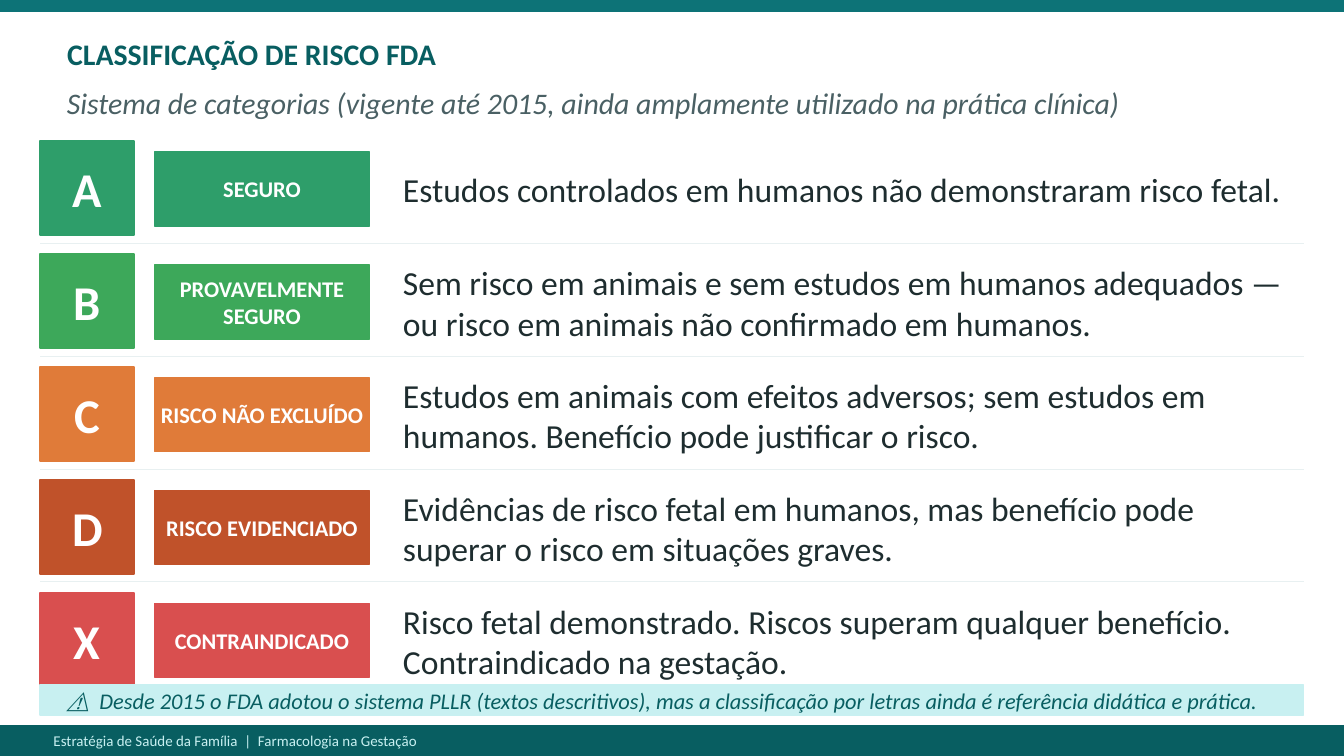
from lxml import etree
from pptx import Presentation
from pptx.dml.color import RGBColor
from pptx.enum import shapes, text
from pptx.oxml import ns
from pptx.util import Pt

rgb = RGBColor.from_string
left, center = text.PP_ALIGN.LEFT, text.PP_ALIGN.CENTER


def block(x, y, w, h, color):
    """Add a rectangle with fill and line of one colour."""
    rect = slide.shapes.add_shape(
        shapes.MSO_SHAPE.RECTANGLE, Pt(x), Pt(y), Pt(w), Pt(h))
    rect.shadow.inherit = False
    rect.fill.solid()
    rect.fill.fore_color.rgb = rgb(color)
    rect.line.color.rgb = rgb(color)
    rect.line.width = Pt(1)
    return rect


def write(shape, words, size, color, bold=False, italic=False, align=left):
    """Put one vertically centred paragraph in a shape."""
    frame = shape.text_frame
    frame.text = words
    frame.word_wrap = True
    frame.auto_size = text.MSO_AUTO_SIZE.NONE
    frame.vertical_anchor = text.MSO_ANCHOR.MIDDLE
    if align == center:
        frame.margin_left = frame.margin_right = 0
        frame.margin_top = frame.margin_bottom = 0
    line = frame.paragraphs[0]
    line.alignment = align
    font = line.runs[0].font
    font.name, font.size = "Calibri", Pt(size)
    font.bold, font.italic = bold, italic
    font.color.rgb = rgb(color)


deck = Presentation()
deck.slide_width, deck.slide_height = Pt(720), Pt(405)
slide = deck.slides.add_slide(deck.slide_layouts[5])

# Bars and heading
block(0, 0, 720, 5.76, "0D7377")
block(0, 388.8, 720, 16.2, "085E61")
foot = slide.shapes.add_textbox(Pt(21.6), Pt(389.5), Pt(676.8), Pt(14.4))
write(foot, "Estratégia de Saúde da Família  |  Farmacologia na Gestação",
      8, "C8F0F1")

title = slide.shapes.title
title.left, title.top = Pt(28.8), Pt(10.8)
title.width, title.height = Pt(662.4), Pt(36)
write(title, "CLASSIFICAÇÃO DE RISCO FDA", 16, "085E61", bold=True)

lead = slide.shapes.add_textbox(Pt(28.8), Pt(44.64), Pt(662.4), Pt(20.16))
write(lead, "Sistema de categorias (vigente até 2015, ainda amplamente "
      "utilizado na prática clínica)", 16, "4A6064", italic=True)

# Risk classes
risks = [
    ("A", "SEGURO", "2E9E6A",
     "Estudos controlados em humanos não demonstraram risco fetal."),
    ("B", "PROVAVELMENTE SEGURO", "3DA85A",
     "Sem risco em animais e sem estudos em humanos adequados — "
     "ou risco em animais não confirmado em humanos."),
    ("C", "RISCO NÃO EXCLUÍDO", "E07B39",
     "Estudos em animais com efeitos adversos; sem estudos em humanos. "
     "Benefício pode justificar o risco."),
    ("D", "RISCO EVIDENCIADO", "C0522A",
     "Evidências de risco fetal em humanos, mas benefício pode "
     "superar o risco em situações graves."),
    ("X", "CONTRAINDICADO", "D94F4F",
     "Risco fetal demonstrado. Riscos superam qualquer benefício. "
     "Contraindicado na gestação."),
]
top, pitch = 75.6, 60.48
for row, (letter, label, color, detail) in enumerate(risks):
    y = top + row * pitch
    if row:
        rule = slide.shapes.add_connector(
            shapes.MSO_CONNECTOR.STRAIGHT,
            Pt(21.6), Pt(y - 5.76), Pt(698.4), Pt(y - 5.76))
        rule.line.color.rgb = rgb("E8F0F1")
        rule.line.width = Pt(0.5)
        etree.SubElement(rule._element.spPr, ns.qn("a:effectLst"))
    write(block(21.6, y, 50.4, 50.4, color), letter, 26, "FFFFFF",
          bold=True, align=center)
    write(block(82.8, y + 5.76, 115.2, 39.6, color), label, 12, "FFFFFF",
          bold=True, align=center)
    note = slide.shapes.add_textbox(Pt(208.8), Pt(y + 3.6), Pt(496.8), Pt(44.64))
    write(note, detail, 18, "1E2D2F")

# Closing remark
block(21.6, 367.2, 676.8, 15.84, "C8F0F1")
remark = slide.shapes.add_textbox(Pt(28.8), Pt(367.2), Pt(662.4), Pt(15.84))
write(remark, "⚠  Desde 2015 o FDA adotou o sistema PLLR (textos descritivos), "
      "mas a classificação por letras ainda é referência didática e prática.",
      12, "085E61", italic=True)

deck.save("out.pptx")
